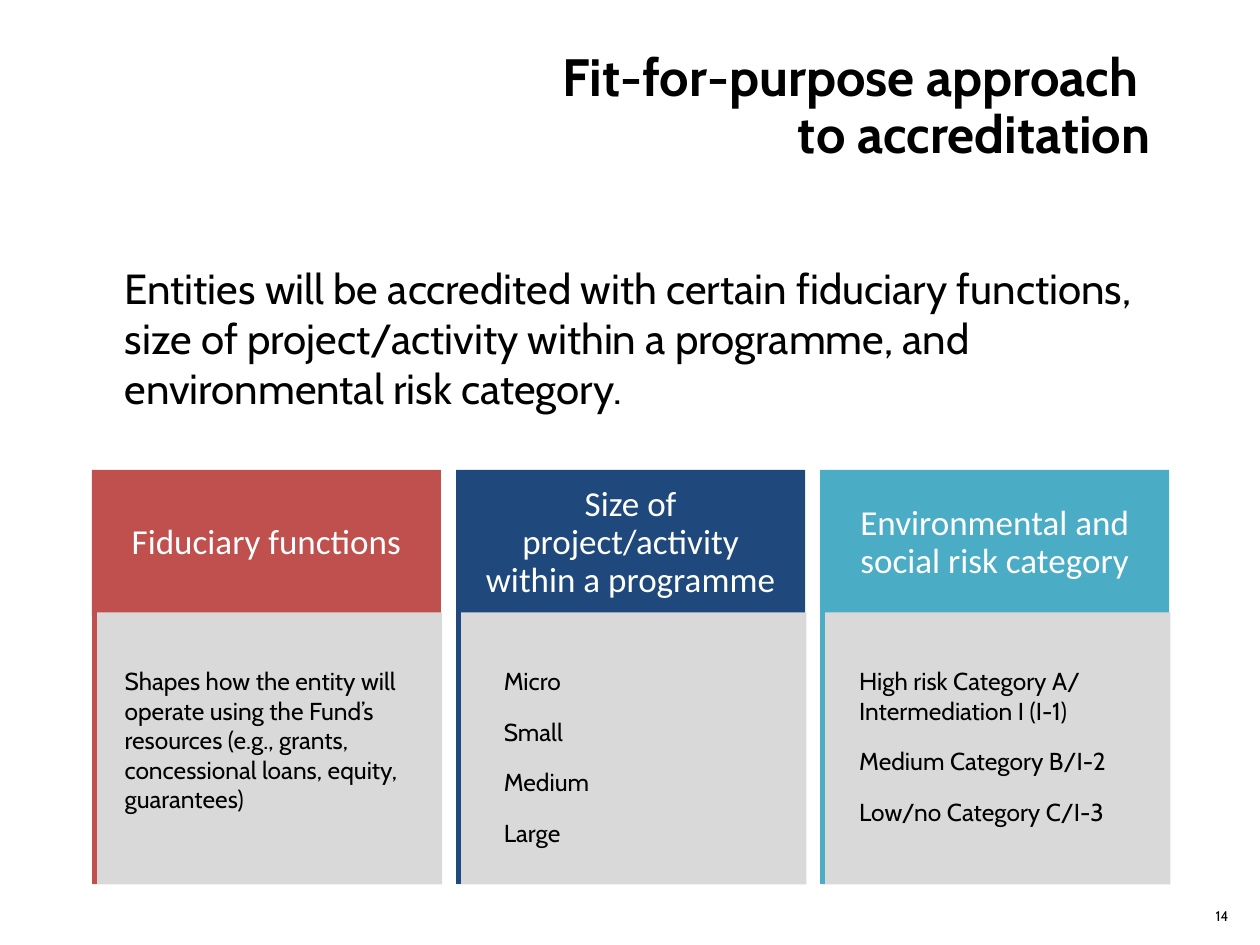
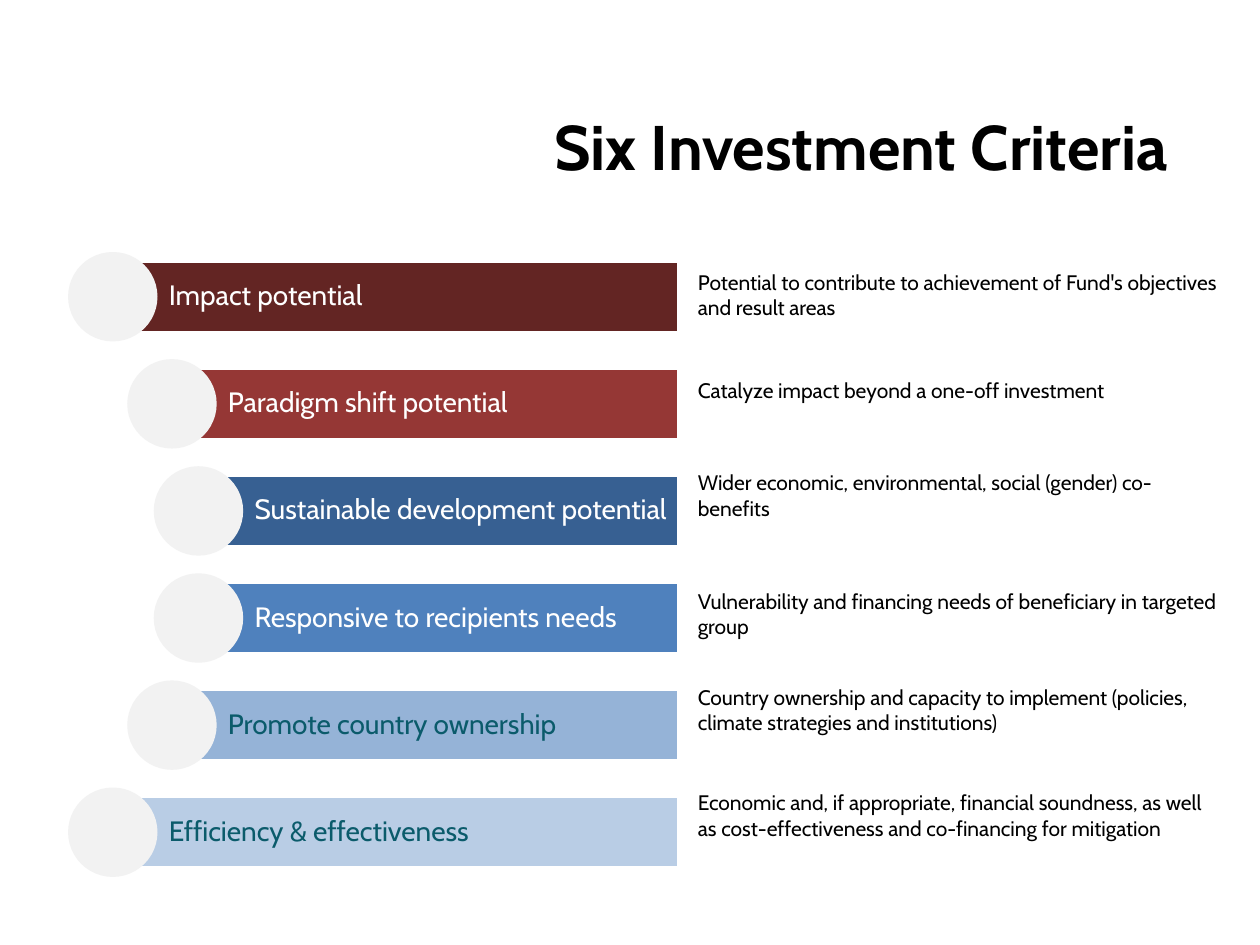
"""Build two slides on accreditation and investment criteria."""
import pptx
import pptx.dml.color
import pptx.enum.shapes
import pptx.enum.text
import pptx.oxml.ns
import pptx.util
import lxml.etree

Inches = pptx.util.Inches
Pt = pptx.util.Pt
Shape = pptx.enum.shapes.MSO_SHAPE
Align = pptx.enum.text.PP_ALIGN
Anchor = pptx.enum.text.MSO_ANCHOR
Color = pptx.dml.color.RGBColor.from_string
qn = pptx.oxml.ns.qn


class Theme:
    font, head = "Cabin", "Calibri"
    black, white, teal = "000000", "FFFFFF", "0B5B6B"
    panel, disc = "D9D9D9", "F2F2F2"
    red, navy, aqua = "C0504D", "1F497D", "4BACC6"
    bars = ["632523", "953735", "376092", "4F81BD", "95B3D7", "B9CDE5"]
    lead, card, label, list, note, page = 24, 20, 16, 14, 12, 8


def write(shape, lines, size, color=Theme.black, font=Theme.font, align=Align.LEFT,
          bold=False, space=1.0, after=0, anchor=Anchor.TOP, wrap=True):
    frame = shape.text_frame
    frame.auto_size = pptx.enum.text.MSO_AUTO_SIZE.NONE
    frame.word_wrap = wrap
    frame.vertical_anchor = anchor
    for n, line in enumerate(lines):
        para = frame.add_paragraph() if n else frame.paragraphs[0]
        para.alignment = align
        para.line_spacing = space
        para.space_before = Pt(0)
        para.space_after = Pt(after)
        for m, part in enumerate(line.split("\n")):
            if m:
                para.add_line_break()
            run = para.add_run()
            run.text = part
            run.font.name = font
            run.font.size = Pt(size)
            run.font.bold = bold
            run.font.color.rgb = Color(color)
    return frame


def block(slide, kind, place, fill):
    shape = slide.shapes.add_shape(kind, *map(Inches, place))
    shape.shadow.inherit = False
    shape.fill.solid()
    shape.fill.fore_color.rgb = Color(fill)
    shape.line.fill.background()
    return shape


deck = pptx.Presentation()
deck.slide_width, deck.slide_height = Inches(10), Inches(7.5)

titles = [
    (1, 1.96, 0.55, 30, "Fit-for-purpose approach \nto accreditation"),
    (5, 2.1, 0.88, 36, "Six Investment Criteria"),
]
for layout, left, top, size, text in titles:
    slide = deck.slides.add_slide(deck.slide_layouts[layout])
    title = slide.shapes.title
    title.left, title.top = Inches(left), Inches(top)
    title.width, title.height = Inches(7.27), Inches(0.62)
    write(title, [text], size, align=Align.RIGHT, bold=True, space=0.9, anchor=Anchor.MIDDLE)

fit, six = deck.slides

body = fit.placeholders[1]
body.left, body.top = Inches(0.89), Inches(2.03)
body.width, body.height = Inches(8.23), Inches(1.41)
lead = write(body, ["Entities will be accredited with certain fiduciary functions, size of "
                    "project/activity within a programme, and environmental risk category."],
             Theme.lead, after=12).paragraphs[0]
lead.space_before = Pt(8)
props = lead._p.get_or_add_pPr()
props.set("marL", "0")
props.set("indent", "0")
lxml.etree.SubElement(props, qn("a:buNone"))

page = fit.shapes.add_textbox(Inches(9.55), Inches(7.15), Inches(0.31), Inches(0.24))
write(page, ["14"], Theme.page, wrap=False)

cards = [
    (Theme.red, "Fiduciary functions", 0.89, 2.48,
     ["Shapes how the entity will operate using the Fund’s resources "
      "(e.g., grants, concessional loans, equity, guarantees)"]),
    (Theme.navy, "Size of project/activity within a programme", 3.9, 2.24,
     ["Micro", "Small", "Medium", "Large"]),
    (Theme.aqua, "Environmental and social risk category", 6.72, 2.39,
     ["High risk Category A/ Intermediation I (I-1)", "Medium Category B/I-2",
      "Low/no Category C/I-3"]),
]
for n, (color, name, inset, width, items) in enumerate(cards):
    left = 0.73 + 2.89 * n
    head = block(fit, Shape.RECTANGLE, (left, 3.73, 2.77, 1.16), color)
    frame = write(head, [name], Theme.card, Theme.white, Theme.head, Align.CENTER,
                  space=0.9, anchor=Anchor.MIDDLE)
    frame.margin_left = frame.margin_right = Inches(0.16)
    frame.margin_top = frame.margin_bottom = Inches(0.09)
    block(fit, Shape.RECTANGLE, (left + 0.01, 4.86, 2.77, 2.16), Theme.panel)
    text = fit.shapes.add_textbox(Inches(inset), Inches(5.24), Inches(width), Inches(1.5))
    write(text, items, Theme.list, after=12)
    edge = Inches(left + 0.02)
    line = fit.shapes.add_connector(pptx.enum.shapes.MSO_CONNECTOR.STRAIGHT,
                                    edge, Inches(4.81), edge, Inches(7.02))
    line.line.color.rgb = Color(color)
    line.line.width = Pt(3)
    lxml.etree.SubElement(line._element.spPr, qn("a:effectLst"))

goals = [
    (0.89, "Impact potential", 2.09,
     "Potential to contribute to achievement of Fund's objectives and result areas"),
    (1.36, "Paradigm shift potential", 2.95,
     "Catalyze impact beyond a one-off investment"),
    (1.57, "Sustainable development potential", 3.68,
     "Wider economic, environmental, social (gender) co-benefits"),
    (1.57, "Responsive to recipients needs", 4.62,
     "Vulnerability and financing needs of beneficiary in targeted group"),
    (1.36, "Promote country ownership", 5.38,
     "Country ownership and capacity to implement (policies, climate strategies and institutions)"),
    (0.89, "Efficiency & effectiveness", 6.22,
     "Economic and, if appropriate, financial soundness, as well as cost-effectiveness "
     "and co-financing for mitigation"),
]
for n, (left, name, high, note) in enumerate(goals):
    top = 2.07 + 0.85 * n
    bar = block(six, Shape.RECTANGLE, (left, top, 5.39 - left, 0.57), Theme.bars[n])
    bar.line.color.rgb = Color(Theme.white)
    bar.line.width = Pt(2)
    frame = write(bar, [name], Theme.label, Theme.white if n < 4 else Theme.teal,
                  space=0.9, anchor=Anchor.MIDDLE)
    frame.margin_left = Inches(0.45)
    frame.margin_right = frame.margin_top = frame.margin_bottom = Inches(0.04)
    block(six, Shape.OVAL, (left - 0.35, top - 0.07, 0.71, 0.71), Theme.disc)
    text = six.shapes.add_textbox(Inches(5.44), Inches(high), Inches(4.36), Inches(0.5))
    write(text, [note], Theme.note)

deck.save("out.pptx")
